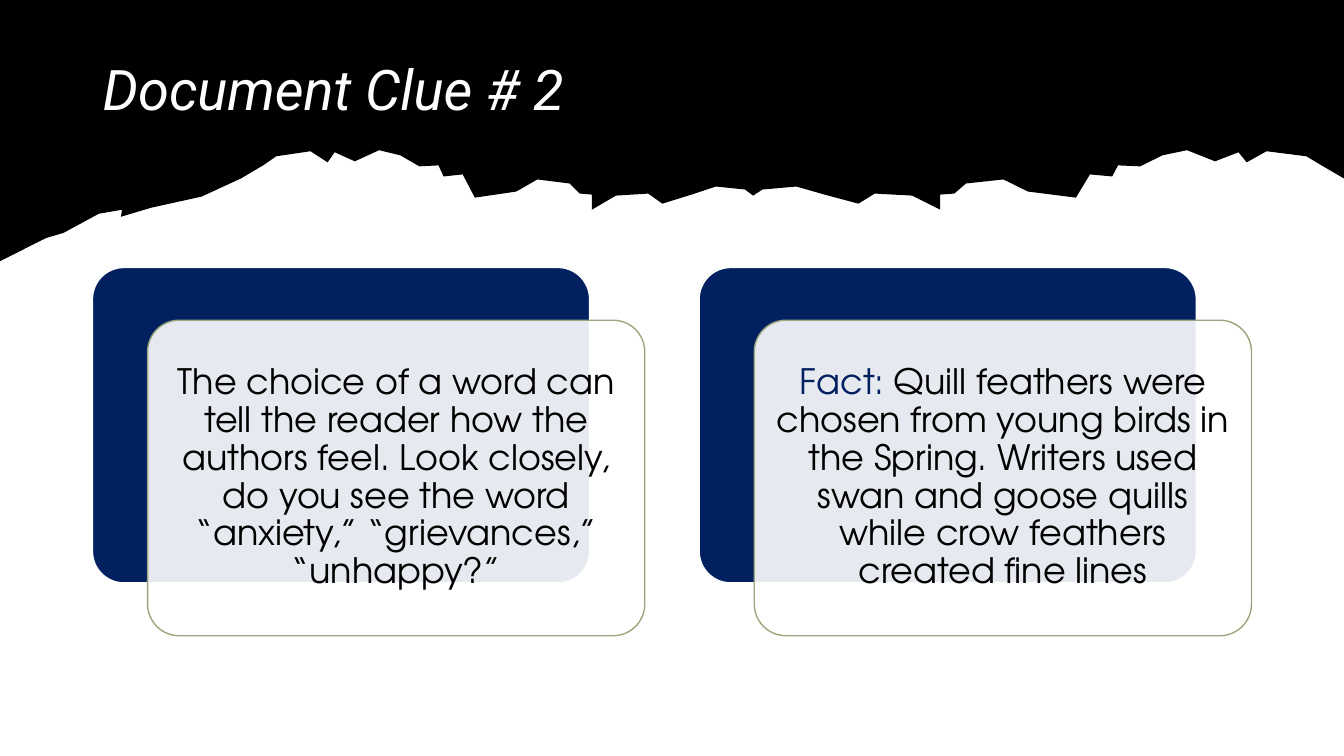
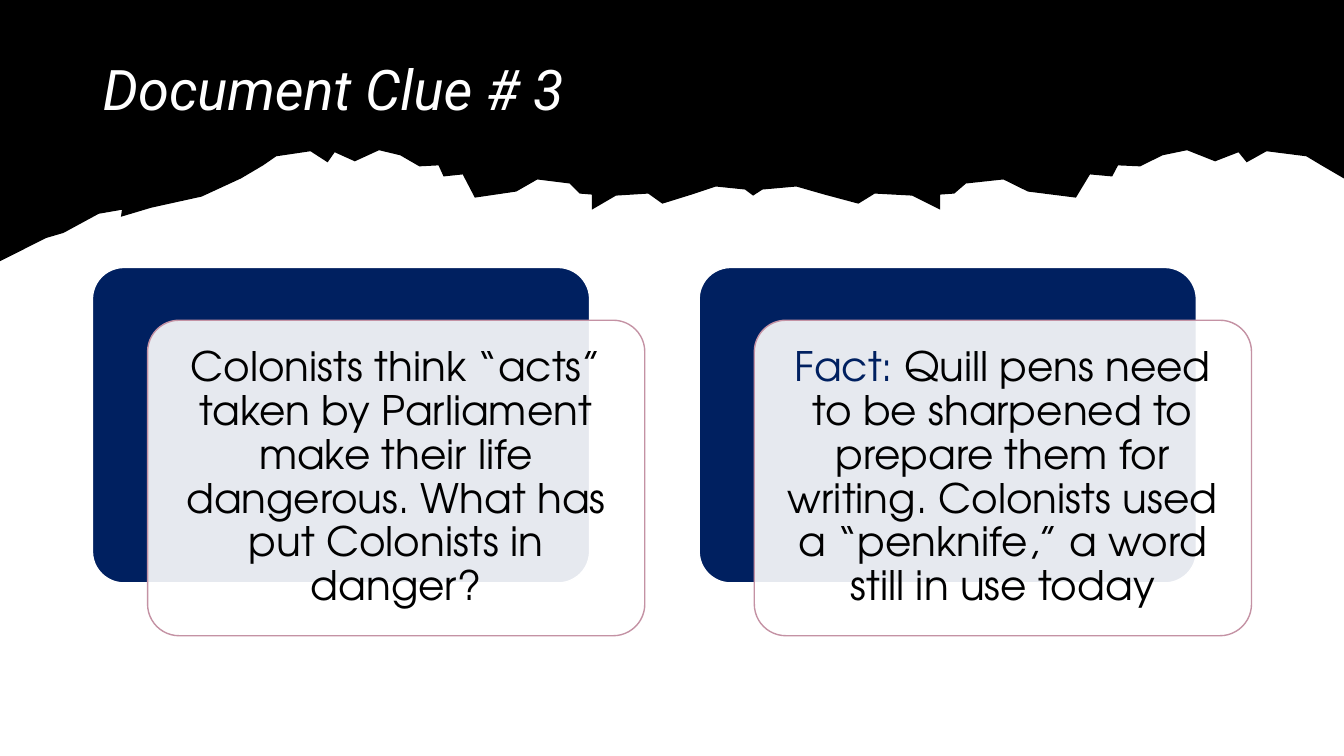
import lxml.etree
import pptx
import pptx.dml.color
import pptx.enum.shapes
import pptx.enum.text
import pptx.oxml.ns
import pptx.util

Cm = pptx.util.Cm
RGBColor = pptx.dml.color.RGBColor
MIDDLE = pptx.enum.text.MSO_ANCHOR.MIDDLE
ALIGN = pptx.enum.text.PP_ALIGN

BLACK = RGBColor(0x00, 0x00, 0x00)
WHITE = RGBColor(0xFF, 0xFF, 0xFF)
NAVY = RGBColor(0x00, 0x20, 0x60)
SAGE = RGBColor(0x9A, 0xA6, 0x7D)
ROSE = RGBColor(0xC4, 0x92, 0xA4)

SLIDE_WIDTH, SLIDE_HEIGHT = Cm(33.87), Cm(19.05)
TITLE_BOX = {"left": Cm(2.33), "top": Cm(1.02), "width": Cm(29.21), "height": Cm(2.59)}
TITLE_FONT = {"name": "Roboto", "size": pptx.util.Pt(40), "italic": True}
CARD_FONT = "TeX Gyre Adventor"
CARD_WIDTH, CARD_HEIGHT = Cm(12.53), Cm(7.95)
CARD_LEFT, CARD_TOP, CARD_PITCH = Cm(2.33), Cm(6.74), Cm(15.29)
FRONT_SHIFT_X, FRONT_SHIFT_Y = Cm(1.39), Cm(1.33)

EDGE_UNITS = 1333
EDGE_CENTER = 747
EDGE_STRETCH = 1.16
LEFT_SLOPE = [
    (0, 259), (46, 236), (63, 231), (98, 212), (121, 208), (120, 215), (150, 206), (200, 195),
]
HALF_EDGE = [
    (239, 177), (261, 164), (274, 155), (308, 150), (325, 161), (332, 151), (352, 160),
    (376, 149), (397, 154), (416, 165), (435, 164), (440, 175), (459, 173), (471, 196),
    (512, 190), (533, 178), (565, 182), (575, 192), (587, 193), (587, 208), (611, 194),
    (643, 192), (657, 202), (686, 193), (710, 185), (739, 188), (747, 194),
]

CLUES = [
    {
        "title": "Document Clue # 2", "line": SAGE, "size": 25, "inset": Cm(0.26),
        "cards": [
            [("The choice of a word can tell the reader how the authors feel. "
              "Look closely, do you see the word “anxiety,” “grievances,” “unhappy?”", BLACK)],
            [("Fact:", NAVY),
             (" Quill feathers were chosen from young birds in the Spring. Writers used "
              "swan and goose quills while crow feathers created fine lines", BLACK)],
        ],
    },
    {
        "title": "Document Clue # 3", "line": ROSE, "size": 29, "inset": Cm(0.31),
        "cards": [
            [("Colonists think “acts” taken by Parliament make their life dangerous. "
              "What has put Colonists in danger?", BLACK)],
            [("Fact: ", NAVY),
             ("Quill pens need to be sharpened to prepare them for writing. Colonists "
              "used a “penknife,” a word still in use today", BLACK)],
        ],
    },
]


def apply_format(target, values):
    """Set each named attribute on the target."""
    for name, value in values.items():
        setattr(target, name, value)


def torn_outline():
    """Return the band outline, its right half a stretched mirror of the left."""
    mirrored = [(min(EDGE_UNITS, EDGE_CENTER + (EDGE_CENTER - x) * EDGE_STRETCH), y)
                for x, y in reversed(HALF_EDGE[:-1])]
    return LEFT_SLOPE + HALF_EDGE + mirrored + [(EDGE_UNITS, 0), (0, 0)]


def add_torn_band(page, left, top, width):
    """Draw the black band with a torn lower edge."""
    unit = width / EDGE_UNITS
    points = [(left + x * unit, top + y * unit) for x, y in torn_outline()]
    builder = page.shapes.build_freeform(*points[0])
    builder.add_line_segments(points[1:], close=True)
    band = builder.convert_to_shape()
    band.shadow.inherit = False
    band.fill.solid()
    band.fill.fore_color.rgb = BLACK
    band.line.fill.background()
    return band


def format_title(page, text, band):
    """Place the title above the band and style it."""
    title = page.shapes.title
    band.element.addnext(title.element)
    apply_format(title, TITLE_BOX)
    frame = title.text_frame
    frame.text = text
    apply_format(frame, {"vertical_anchor": MIDDLE, "word_wrap": True,
                         "auto_size": pptx.enum.text.MSO_AUTO_SIZE.NONE})
    para = frame.paragraphs[0]
    apply_format(para, {"alignment": ALIGN.LEFT, "line_spacing": 0.9})
    span = para.runs[0]
    apply_format(span.font, TITLE_FONT)
    span.font.color.rgb = WHITE


def add_panel(page, left, top, fill, line):
    """Draw one rounded panel."""
    panel = page.shapes.add_shape(pptx.enum.shapes.MSO_SHAPE.ROUNDED_RECTANGLE,
                                  left, top, CARD_WIDTH, CARD_HEIGHT)
    panel.adjustments[0] = 0.1
    panel.shadow.inherit = False
    panel.fill.solid()
    panel.fill.fore_color.rgb = fill
    panel.line.color.rgb = line
    panel.line.width = pptx.util.Pt(1)
    return panel


def add_card(page, left, top, spans, clue):
    """Draw a navy panel with a translucent text panel shifted over it."""
    add_panel(page, left, top, NAVY, WHITE)
    front = add_panel(page, left + FRONT_SHIFT_X, top + FRONT_SHIFT_Y, WHITE, clue["line"])
    qn = pptx.oxml.ns.qn
    fill_color = front.element.spPr.find(qn("a:solidFill")).find(qn("a:srgbClr"))
    lxml.etree.SubElement(fill_color, qn("a:alpha"), val="90000")
    frame = front.text_frame
    apply_format(frame, {"word_wrap": True, "vertical_anchor": MIDDLE})
    apply_format(frame, {f"margin_{side}": clue["inset"]
                         for side in ("left", "top", "right", "bottom")})
    para = frame.paragraphs[0]
    apply_format(para, {"alignment": ALIGN.CENTER, "line_spacing": 0.9})
    for text, color in spans:
        span = para.add_run()
        span.text = text
        apply_format(span.font, {"name": CARD_FONT, "size": pptx.util.Pt(clue["size"])})
        span.font.color.rgb = color


def add_clue_slide(deck, clue):
    """Build one clue slide with its band, title and cards."""
    page = deck.slides.add_slide(deck.slide_layouts[5])
    band = add_torn_band(page, 0, 0, SLIDE_WIDTH)
    format_title(page, clue["title"], band)
    for column, spans in enumerate(clue["cards"]):
        add_card(page, CARD_LEFT + column * CARD_PITCH, CARD_TOP, spans, clue)


def main():
    """Build and save the deck."""
    deck = pptx.Presentation()
    apply_format(deck, {"slide_width": SLIDE_WIDTH, "slide_height": SLIDE_HEIGHT})
    for clue in CLUES:
        add_clue_slide(deck, clue)
    deck.save("out.pptx")


if __name__ == "__main__":
    main()
